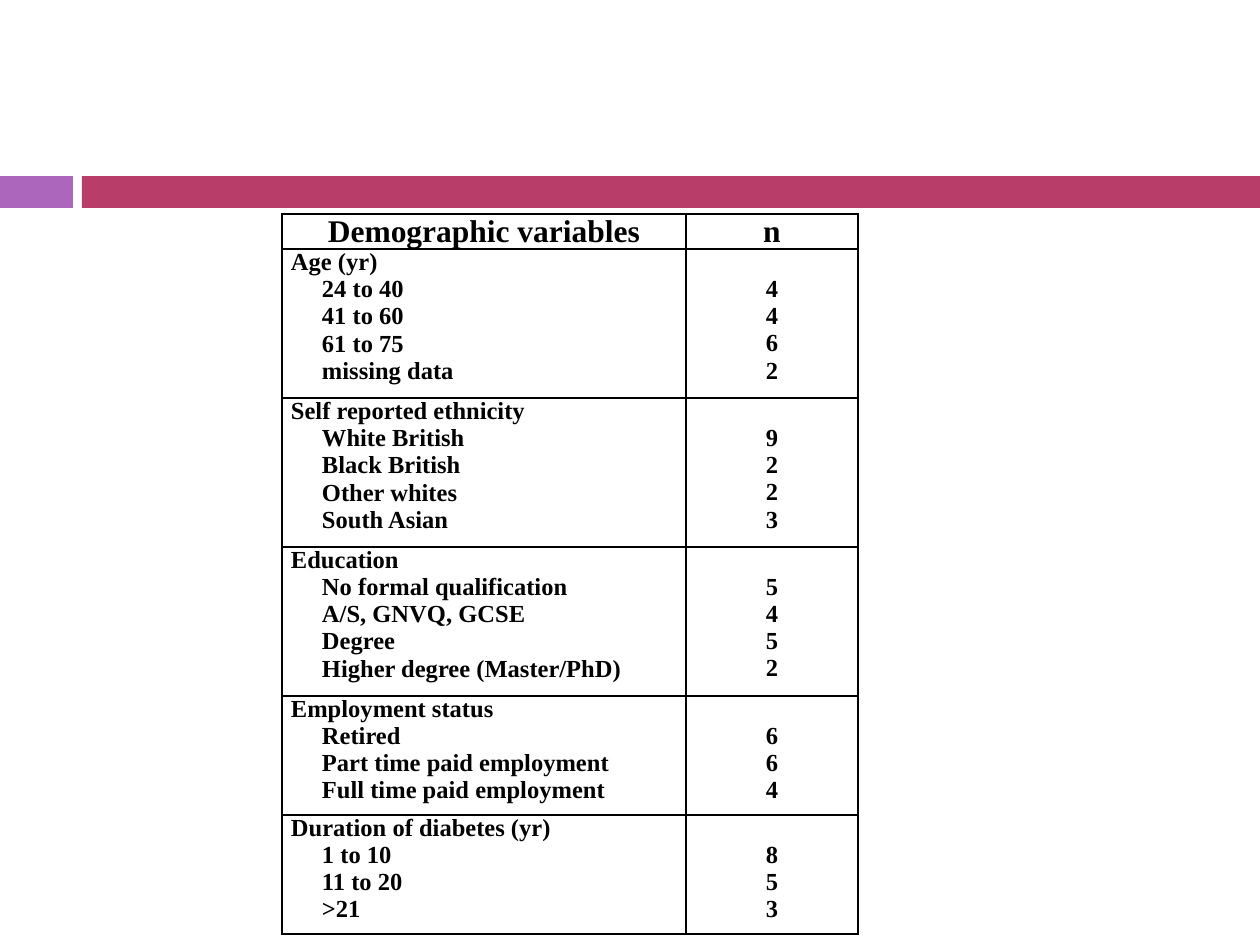
from lxml.etree import SubElement
from pptx import Presentation
from pptx.dml.color import RGBColor
from pptx.enum.shapes import MSO_SHAPE as Shape
from pptx.enum.text import PP_ALIGN as Align
from pptx.oxml.ns import qn
from pptx.util import Pt

PX = 914400 // 126
FONT, BLACK = "Times New Roman", "000000"

# Content: group heading, then (label, count) pairs
HEADER = ("Demographic variables", "n")
GROUPS = [
    ("Age (yr)", [("24 to 40", 4), ("41 to 60", 4), ("61 to 75", 6),
                  ("missing data", 2)]),
    ("Self reported ethnicity", [("White British", 9), ("Black British", 2),
                                 ("Other whites", 2), ("South Asian", 3)]),
    ("Education", [("No formal qualification", 5), ("A/S, GNVQ, GCSE", 4),
                   ("Degree", 5), ("Higher degree (Master/PhD)", 2)]),
    ("Employment status", [("Retired", 6), ("Part time paid employment", 6),
                           ("Full time paid employment", 4)]),
    ("Duration of diabetes (yr)", [("1 to 10", 8), ("11 to 20", 5), (">21", 3)]),
]
BANDS = [(0, 73, "AC66BB"), (82, 1178, "B83D68")]  # left, width, colour
BAND_TOP, BAND_HEIGHT = 176, 32

# Table measures
TABLE_LEFT, TABLE_TOP = 282, 214
COLUMN_WIDTHS = (404, 172)
HEADER_HEIGHT, LINE_HEIGHT = 35, 27
ROW_HEIGHTS = {3: 119, 4: 149}  # by number of entries
INDENT, SIDE_MARGIN = 31, 9


def px(n):
    return n * PX


def color(hex_code):
    return RGBColor.from_string(hex_code)


def write(cell, lines, size=14, align=Align.LEFT, indent=0, top=0):
    """Fill a cell; lines after the first are indented."""
    cell.margin_left = cell.margin_right = px(SIDE_MARGIN)
    cell.margin_top, cell.margin_bottom = px(top), 0
    frame = cell.text_frame
    for i, line in enumerate(lines):
        paragraph = frame.add_paragraph() if i else frame.paragraphs[0]
        paragraph.alignment = align
        if i and indent:
            properties = paragraph._p.get_or_add_pPr()
            properties.set("marL", str(px(indent)))
            properties.set("indent", "0")
        run = paragraph.add_run()
        run.text = str(line)
        font = run.font
        font.name, font.size, font.bold = FONT, Pt(size), True
        font.color.rgb = color(BLACK)


def add_borders(cell):
    properties = cell._tc.get_or_add_tcPr()
    for side in ("a:lnL", "a:lnR", "a:lnT", "a:lnB"):
        line = SubElement(properties, qn(side), w=str(Pt(1)))
        fill = SubElement(line, qn("a:solidFill"))
        SubElement(fill, qn("a:srgbClr"), val=BLACK)


prs = Presentation()
prs.slide_width, prs.slide_height = px(1260), px(945)
slide = prs.slides.add_slide(prs.slide_layouts[6])

# Coloured bands
for left, width, fill in BANDS:
    band = slide.shapes.add_shape(
        Shape.RECTANGLE, px(left), px(BAND_TOP), px(width), px(BAND_HEIGHT))
    band.shadow.inherit = False
    band.fill.solid()
    band.fill.fore_color.rgb = color(fill)
    band.line.fill.background()

# Demographics table
heights = [HEADER_HEIGHT] + [ROW_HEIGHTS[len(entries)] for _, entries in GROUPS]
table = slide.shapes.add_table(
    len(heights), len(COLUMN_WIDTHS), px(TABLE_LEFT), px(TABLE_TOP),
    px(sum(COLUMN_WIDTHS)), px(sum(heights))).table
table.first_row = table.horz_banding = False
for column, width in zip(table.columns, COLUMN_WIDTHS):
    column.width = px(width)
for row, height in zip(table.rows, heights):
    row.height = px(height)

for c, title in enumerate(HEADER):
    write(table.cell(0, c), [title], size=18, align=Align.CENTER)
for r, (heading, entries) in enumerate(GROUPS, start=1):
    labels, counts = zip(*entries)
    write(table.cell(r, 0), [heading, *labels], indent=INDENT)
    # Counts start one line down, level with the first label
    write(table.cell(r, 1), counts, align=Align.CENTER, top=LINE_HEIGHT)

for cell in table.iter_cells():
    add_borders(cell)
    cell.fill.background()

prs.save("out.pptx")
